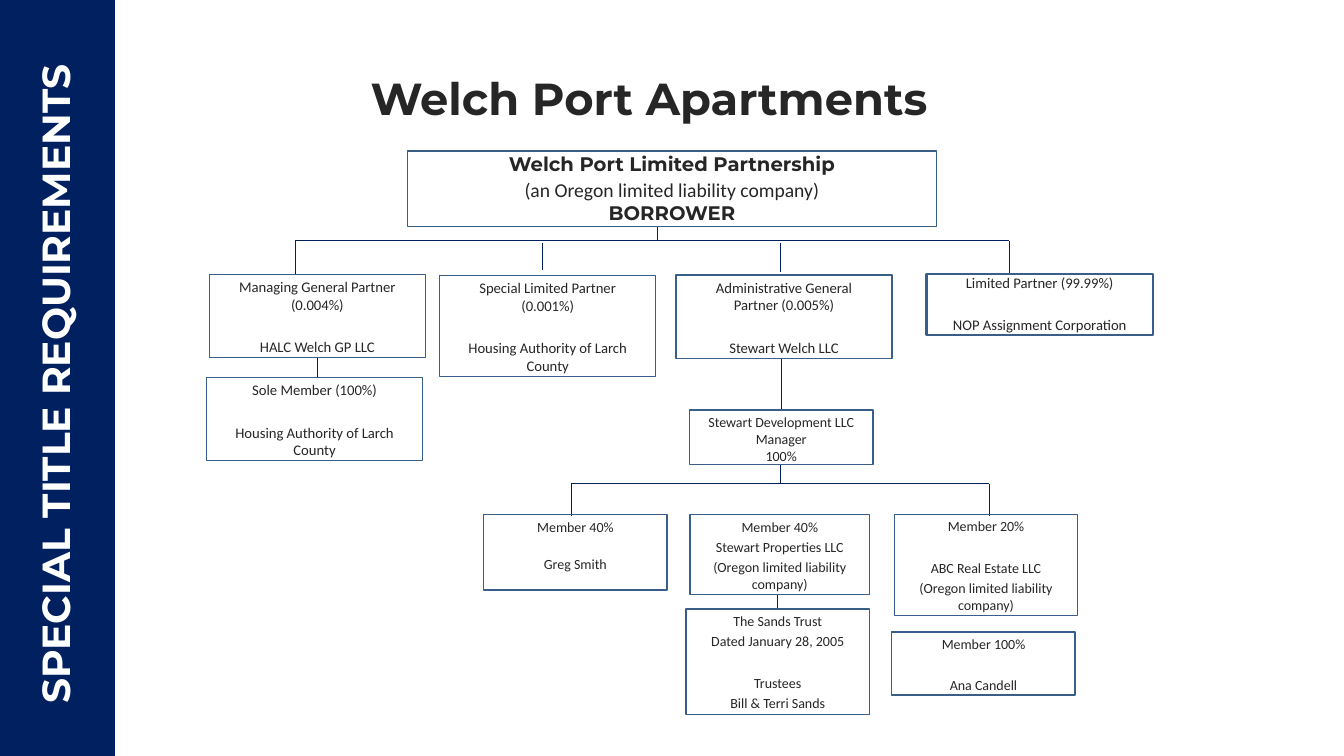
"""Build the Welch Port Apartments ownership chart slide."""
import pptx
import pptx.dml.color
import pptx.enum.shapes
import pptx.enum.text
import pptx.oxml.ns
import pptx.util
from lxml import etree

Pt = pptx.util.Pt
RECTANGLE = pptx.enum.shapes.MSO_SHAPE.RECTANGLE
STRAIGHT = pptx.enum.shapes.MSO_CONNECTOR.STRAIGHT
COLORS = {"navy": "002060", "border": "395E88", "ink": "262626", "white": "FFFFFF"}


def color(name):
    return pptx.dml.color.RGBColor.from_string(COLORS[name])


def write_lines(shape, lines, size, font="Calibri", bold=False, ink="ink", side=0, top=0.7):
    frame = shape.text_frame
    frame.word_wrap = True
    frame.auto_size = pptx.enum.text.MSO_AUTO_SIZE.NONE
    frame.vertical_anchor = pptx.enum.text.MSO_ANCHOR.TOP
    frame.margin_left = frame.margin_right = Pt(side)
    frame.margin_top, frame.margin_bottom = Pt(top), 0
    frame.text = "\n".join(text for text, gap in lines)
    for para, (text, gap) in zip(frame.paragraphs, lines):
        para.alignment = pptx.enum.text.PP_ALIGN.CENTER
        para.line_spacing = 1.0
        para.space_before = Pt(gap)
        for span in para.runs:
            span.font.name, span.font.size, span.font.bold = font, Pt(size), bold
            span.font.color.rgb = color(ink)


deck = pptx.Presentation()
deck.slide_width, deck.slide_height = Pt(960), Pt(540)
page = deck.slides.add_slide(deck.slide_layouts[5])

title = page.shapes.title
title.left, title.top, title.width, title.height = Pt(212.5), Pt(49.7), Pt(502.5), Pt(40)
write_lines(title, [("Welch Port Apartments", 0)], 32, "Montserrat", True)

connectors = [
    (211, 172, 211, 196), (720.8, 172, 720.8, 196), (211, 172, 720.8, 172),
    (469.5, 161.5, 469.5, 172), (387.3, 173.5, 387.3, 193), (557.5, 173.5, 557.5, 194.5),
    (226.8, 255.5, 226.8, 269.5), (558, 256, 558, 293),
    (407.8, 345.6, 407.8, 368.4), (706.5, 345.6, 706.5, 368.4), (407.8, 345.6, 706.5, 345.6),
    (557.3, 332, 557.3, 345.6), (555, 424.5, 555, 435),
]
for x1, y1, x2, y2 in connectors:
    connector = page.shapes.add_connector(STRAIGHT, Pt(x1), Pt(y1), Pt(x2), Pt(y2))
    connector.line.color.rgb = color("navy")
    connector.line.width = Pt(0.5)
    properties = connector._element.spPr
    etree.SubElement(properties, pptx.oxml.ns.qn("a:effectLst"))

borrower = (291, 107.8, 378, 54, [
    ("Welch Port Limited Partnership", 0),
    ("(an Oregon limited liability company)", 1.6),
    ("BORROWER", 0)])
partners = [
    (149.5, 196, 154.5, 59.5, [("Managing General Partner (0.004%)", 0), ("HALC Welch GP LLC", 17.8)]),
    (314, 196.8, 154.5, 72, [("Special Limited Partner (0.001%)", 0),
                             ("Housing Authority of Larch County", 17.8)]),
    (482.8, 196.5, 154.5, 59.5, [("Administrative General Partner (0.005%)", 0),
                                 ("Stewart Welch LLC", 17.8)]),
    (661.7, 195.8, 162, 43.5, [("Limited Partner (99.99%)", 0), ("NOP Assignment Corporation", 17.2)]),
    (147.5, 269.5, 154.5, 59.5, [("Sole Member (100%)", 0),
                                 ("Housing Authority of Larch County", 17.8)]),
]
members = [
    (492.5, 293, 131, 39, [("Stewart Development LLC", 0), ("Manager", 0), ("100%", 0)]),
    (345.5, 367.5, 131, 54, [("Member 40%", 0), ("Greg Smith", 14.8)]),
    (493, 367.5, 128, 57, [("Member 40%", 0), ("Stewart Properties LLC", 2.6),
                           ("(Oregon limited liability company)", 2.6)]),
    (638.8, 367.5, 131, 72, [("Member 20%", 0), ("ABC Real Estate LLC", 17.4),
                             ("(Oregon limited liability company)", 2.6)]),
    (637, 451.5, 131, 45, [("Member 100%", 0), ("Ana Candell", 17.4)]),
    (490, 435, 131, 75.5, [("The Sands Trust", 0), ("Dated January 28, 2005", 2.6),
                           ("Trustees", 17.4), ("Bill & Terri Sands", 2.6)]),
]
for boxes, size, side in (([borrower], 14, 0), (partners, 10.5, 14.4), (members, 10, 2.8)):
    for left, top, width, height, lines in boxes:
        box = page.shapes.add_shape(RECTANGLE, Pt(left), Pt(top), Pt(width), Pt(height))
        box.shadow.inherit = False
        box.fill.background()
        box.line.color.rgb = color("border")
        is_limited_partner = lines[0][0].startswith("Limited")
        box.line.width = Pt(1.63 if is_limited_partner else 1)
        inset = 0 if is_limited_partner else 0.7 if size == 14 else 2.5
        write_lines(box, lines, size, side=side, top=inset)
        if size == 14:
            for para in box.text_frame.paragraphs[::2]:
                para.runs[0].font.name, para.runs[0].font.bold = "Montserrat", True

sidebar = page.shapes.add_shape(RECTANGLE, 0, 0, Pt(82), Pt(540))
sidebar.shadow.inherit = False
sidebar.fill.solid()
sidebar.fill.fore_color.rgb = color("navy")
sidebar.line.fill.background()

section = page.shapes.add_textbox(Pt(-213), Pt(257), Pt(504), Pt(35))
section.rotation = 270
write_lines(section, [("SPECIAL TITLE REQUIREMENTS", 0)], 28, "Montserrat", True, "white")

deck.save("out.pptx")
